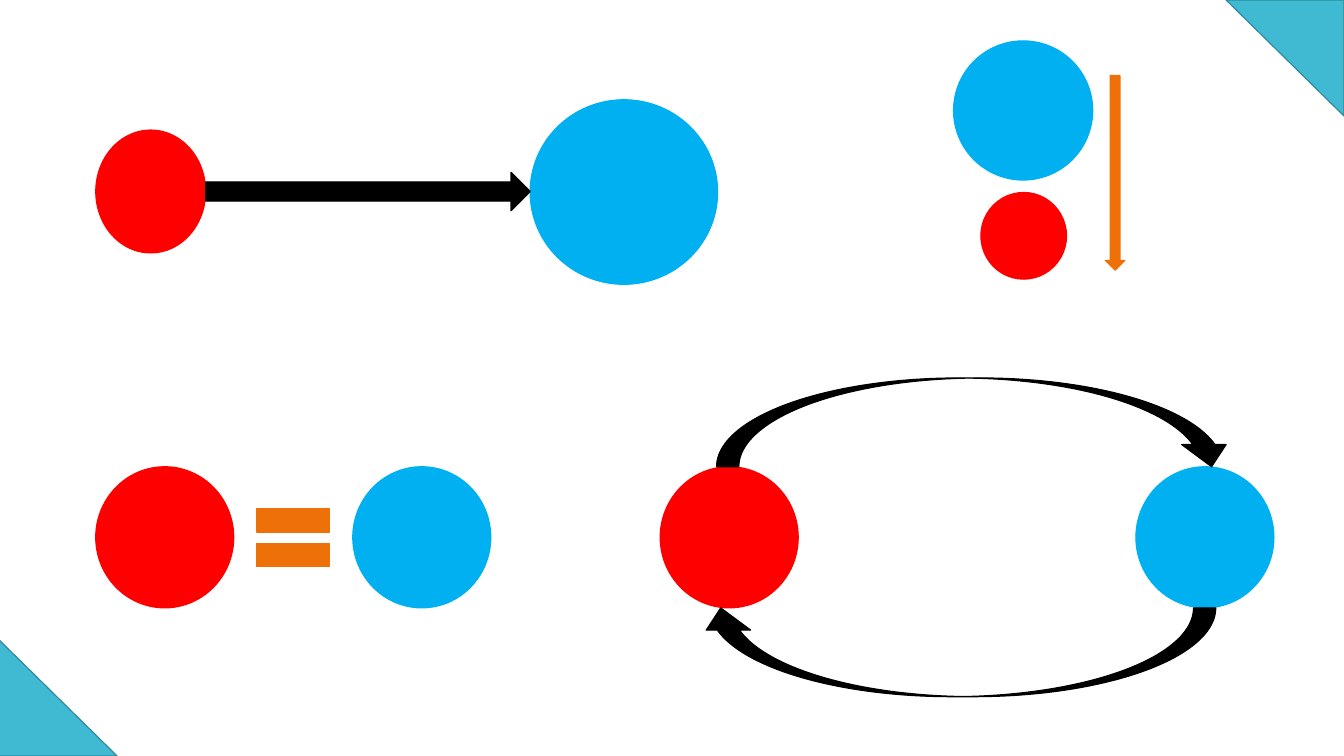
from dataclasses import dataclass

from pptx import Presentation
from pptx.dml.color import RGBColor
from pptx.enum.shapes import MSO_SHAPE
from pptx.util import Pt


@dataclass(frozen=True)
class Theme:
    red: str = "FF0000"
    blue: str = "00B0F0"
    black: str = "000000"
    orange: str = "EE7008"
    teal: str = "40BAD2"
    teal_edge: str = "2F8A9B"
    line_width: float = 0.85


THEME = Theme()
WIDTH, HEIGHT = 960, 540
CIRCLE_W, CIRCLE_H = 98.6, 100.8
LOWER_TOP = 333.4
CORNER_W, CORNER_H = 84.2, 82.8


def add_figure(s, kind, box, fill, edge=None, flip="", rotation=0):
    """Add a filled preset shape; flip holds any of the letters H and V."""
    sp = s.shapes.add_shape(kind, *(Pt(v) for v in box))
    sp.shadow.inherit = False
    sp.fill.solid()
    sp.fill.fore_color.rgb = RGBColor.from_string(fill)
    sp.line.color.rgb = RGBColor.from_string(edge or fill)
    sp.line.width = Pt(THEME.line_width)
    sp.rotation = rotation
    for axis in flip:
        sp.element.spPr.get_or_add_xfrm().set(f"flip{axis}", "1")
    return sp


def add_circle(s, box, fill):
    return add_figure(s, MSO_SHAPE.OVAL, box, fill)


def add_lower_circle(s, left, fill):
    return add_circle(s, (left, LOWER_TOP, CIRCLE_W, CIRCLE_H), fill)


def add_curved_arrow(s, left, top, flip):
    box = (left, top, 369.4, 63.4)
    return add_figure(s, MSO_SHAPE.CURVED_UP_ARROW, box, THEME.black, flip=flip)


def add_down_arrow(s, box, fill, rotation=0):
    return add_figure(s, MSO_SHAPE.DOWN_ARROW, box, fill, flip="H", rotation=rotation)


def add_corner(s, left, top, flip=""):
    box = (left, top, CORNER_W, CORNER_H)
    return add_figure(s, MSO_SHAPE.RIGHT_TRIANGLE, box, THEME.teal, THEME.teal_edge, flip)


def main():
    prs = Presentation()
    prs.slide_width, prs.slide_height = Pt(WIDTH), Pt(HEIGHT)
    s = prs.slides.add_slide(prs.slide_layouts[6])

    # Cycle between red and blue
    add_lower_circle(s, 471.6, THEME.red)
    add_lower_circle(s, 811.4, THEME.blue)
    add_curved_arrow(s, 499, LOWER_TOP + CIRCLE_H, "H")
    add_curved_arrow(s, 511.9, 270, "V")

    # Small red leading to large blue
    add_circle(s, (68.4, 92.9, 78.5, 87.8), THEME.red)
    add_circle(s, (378.7, 71.3, 133.9, 131.8), THEME.blue)
    add_down_arrow(s, (249.1, 20.9, 27.4, 231.8), THEME.black, rotation=270)

    # Blue above red, descending
    add_circle(s, (681.1, 29.2, 99.4, 99.4), THEME.blue)
    add_circle(s, (700.6, 137.5, 61.2, 61.9), THEME.red)
    add_down_arrow(s, (789.5, 54, 14, 139), THEME.orange)

    # Red equals blue
    add_lower_circle(s, 252, THEME.blue)
    add_lower_circle(s, 68.4, THEME.red)
    add_figure(s, MSO_SHAPE.MATH_EQUAL, (173.5, 349.2, 71.3, 69.8), THEME.orange)

    # Corner decoration
    add_corner(s, -0.5, HEIGHT - CORNER_H)
    add_corner(s, WIDTH - CORNER_W, 0, "HV")

    prs.save("out.pptx")


if __name__ == "__main__":
    main()
